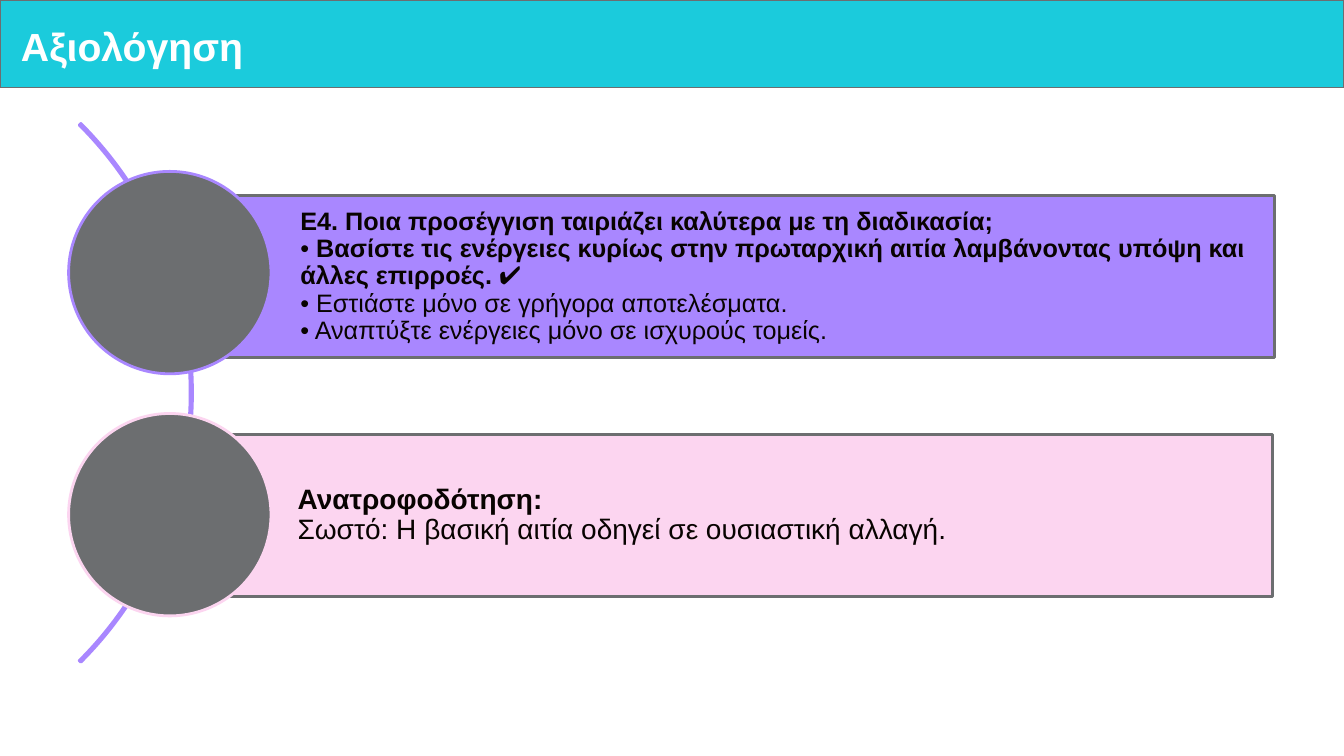
from pptx import Presentation
from pptx.dml.color import RGBColor
from pptx.enum.shapes import MSO_SHAPE
from pptx.enum.text import MSO_ANCHOR, PP_ALIGN
from pptx.util import Cm, Pt

CYAN, GREY, PURPLE, PINK = "1BCBDC", "6C6E70", "A987FF", "FCD5F0"
WHITE, INK = "FFFFFF", "080301"
SLIDE_WIDTH, SLIDE_HEIGHT = 33.87, 19.05
CIRCLE_SIZE = 5.1

QUESTION = [
    [("Ε4. Ποια προσέγγιση ταιριάζει καλύτερα με τη διαδικασία;", True)],
    [("• ", False),
     ("Βασίστε τις ενέργειες κυρίως στην πρωταρχική αιτία λαμβάνοντας υπόψη και άλλες επιρροές.", True),
     (" ✔", False)],
    [("• Εστιάστε μόνο σε γρήγορα αποτελέσματα.", False)],
    [("• Αναπτύξτε ενέργειες μόνο σε ισχυρούς τομείς.", False)],
]
FEEDBACK = [
    [("Ανατροφοδότηση:", True)],
    [("Σωστό: Η βασική αιτία οδηγεί σε ουσιαστική αλλαγή.", False)],
]


def color(hex_string):
    """Turn a hex string into a colour."""
    return RGBColor.from_string(hex_string)


def add_figure(slide, kind, box, fill, line, line_width=2):
    """Add a preset shape filling the box, given in centimetres."""
    shape = slide.shapes.add_shape(kind, *(Cm(length) for length in box))
    shape.shadow.inherit = False
    if fill:
        shape.fill.solid()
        shape.fill.fore_color.rgb = color(fill)
    else:
        shape.fill.background()
    shape.line.color.rgb = color(line)
    shape.line.width = Pt(line_width)
    return shape


def write_lines(shape, lines, size, text_color, margins):
    """Write lines of (text, bold) runs into the shape."""
    frame = shape.text_frame
    frame_format = {"word_wrap": True, "vertical_anchor": MSO_ANCHOR.MIDDLE}
    for side, margin in zip(("left", "top", "right", "bottom"), margins):
        frame_format[f"margin_{side}"] = Cm(margin)
    for name, value in frame_format.items():
        setattr(frame, name, value)
    paragraph = frame.paragraphs[0]
    paragraph.alignment = PP_ALIGN.LEFT
    paragraph.line_spacing = 0.9
    for index, line in enumerate(lines):
        if index:
            paragraph.add_line_break()
        for text, bold in line:
            run = paragraph.add_run()
            run.text = text
            for name, value in {"name": "Arial", "size": Pt(size), "bold": bold}.items():
                setattr(run.font, name, value)
            run.font.color.rgb = color(text_color)


def add_title_bar(slide, box, title):
    """Draw the title band across the box."""
    bar = add_figure(slide, MSO_SHAPE.RECTANGLE, box, CYAN, GREY, 1)
    write_lines(bar, [[(title, True)]], 28, WHITE, (0.53, 0.38, 0.15, 0.15))


def add_arc(slide, box):
    """Draw the thin arc that links the panels."""
    arc = add_figure(slide, MSO_SHAPE.BLOCK_ARC, box, None, PURPLE)
    for index, value in enumerate((189, 27, 0.003)):
        arc.adjustments[index] = value


def add_panel(slide, box, circle_corner, accent, lines, size):
    """Draw a text panel in the box with a circle over its left end."""
    panel = add_figure(slide, MSO_SHAPE.RECTANGLE, box, accent, GREY)
    write_lines(panel, lines, size, INK, (3.23, 0.15, 0.15, 0.15))
    circle_box = (*circle_corner, CIRCLE_SIZE, CIRCLE_SIZE)
    add_figure(slide, MSO_SHAPE.OVAL, circle_box, GREY, accent)


def main():
    """Build and save the slide."""
    presentation = Presentation()
    presentation.slide_width = Cm(SLIDE_WIDTH)
    presentation.slide_height = Cm(SLIDE_HEIGHT)
    slide = presentation.slides.add_slide(presentation.slide_layouts[6])
    add_title_bar(slide, (0, 0, SLIDE_WIDTH, 2.21), "Αξιολόγηση")
    add_arc(slide, (-14.35, 0.3, 19.2, 19.2))
    add_panel(slide, (4.34, 4.93, 27.79, 4.09), (1.73, 4.32), PURPLE, QUESTION, 18)
    add_panel(slide, (4.27, 10.95, 27.79, 4.09), (1.73, 10.42), PINK, FEEDBACK, 20)
    presentation.save("out.pptx")


if __name__ == "__main__":
    main()
